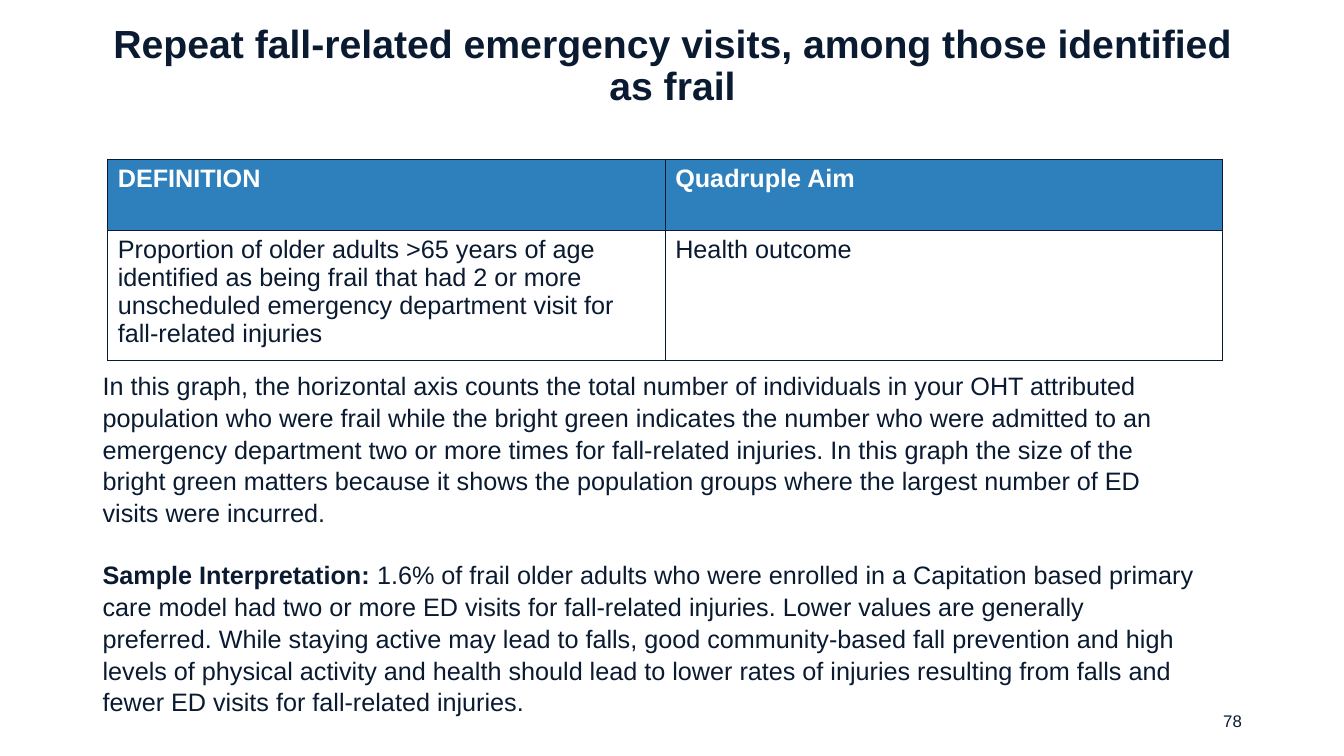
from dataclasses import dataclass

from lxml import etree
from pptx import Presentation
from pptx.dml.color import RGBColor
from pptx.enum import text
from pptx.oxml import ns
from pptx.util import Pt


@dataclass(frozen=True)
class Theme:
    font: str = "Arial"
    ink: str = "0A1A31"
    header: str = "2E80BC"
    paper: str = "FFFFFF"
    title_size: int = 28
    body_size: int = 18
    number_size: int = 12


THEME = Theme()

TITLE = "Repeat fall-related emergency visits, among those identified as frail"
DEFINITION_ROWS = [
    ["DEFINITION", "Quadruple Aim"],
    ["Proportion of older adults >65 years of age identified as being frail that had "
     "2 or more unscheduled emergency department visit for fall-related injuries",
     "Health outcome"],
]
EXPLANATION = [
    [("In this graph, the horizontal axis counts the total number of individuals in your OHT attributed "
      "population who were frail while the bright green indicates the number who were admitted to an "
      "emergency department two or more times for fall-related injuries. In this graph the size of "
      "the bright green matters because it shows the population groups where the largest number of ED "
      "visits were incurred.", False)],
    [("Sample Interpretation: ", True),
     ("1.6% of frail older adults who were enrolled in a Capitation based primary care model had two or "
      "more ED visits for fall-related injuries. Lower values are generally preferred. While staying "
      "active may lead to falls, good community-based fall prevention and high levels of physical "
      "activity and health should lead to lower rates of injuries resulting from falls and fewer ED "
      "visits for fall-related injuries. ", False)],
]


def style_font(font, size, color=THEME.ink, bold=False):
    """Apply the theme typeface with a size, colour and weight."""
    font.name = THEME.font
    font.size = Pt(size)
    font.bold = bold
    font.color.rgb = RGBColor.from_string(color)


def place(shape, left, top, width, height):
    """Position a shape, with lengths in points."""
    shape.left, shape.top = Pt(left), Pt(top)
    shape.width, shape.height = Pt(width), Pt(height)


def set_title(page, wording):
    """Fill and format the title placeholder."""
    title = page.shapes.title
    place(title, 55.5, 17.3, 849.6, 60.5)
    frame = title.text_frame
    frame.text = wording
    frame.word_wrap = True
    frame.auto_size = text.MSO_AUTO_SIZE.NONE
    frame.vertical_anchor = text.MSO_ANCHOR.MIDDLE
    para = frame.paragraphs[0]
    para.alignment = text.PP_ALIGN.CENTER
    para.line_spacing = 0.9
    style_font(para.font, THEME.title_size, bold=True)


def add_text(page, bounds, paragraphs, size, align=text.PP_ALIGN.LEFT,
             anchor=text.MSO_ANCHOR.TOP, line_spacing=1.0, gap=0):
    """Add a wrapped text box of paragraphs made of (wording, bold) spans."""
    frame = page.shapes.add_textbox(*map(Pt, bounds)).text_frame
    frame.word_wrap = True
    frame.vertical_anchor = anchor
    for index, spans in enumerate(paragraphs):
        para = frame.add_paragraph() if index else frame.paragraphs[0]
        para.alignment = align
        para.line_spacing = line_spacing
        if index:
            para.space_before = Pt(gap)
        style_font(para.font, size)
        for wording, bold in spans:
            span = para.add_run()
            span.text = wording
            if bold:
                span.font.bold = True


def outline_cell(cell):
    """Draw a one-point line on all four sides of a cell."""
    properties = cell._tc.get_or_add_tcPr()
    for index, side in enumerate(("lnL", "lnR", "lnT", "lnB")):
        line = etree.Element(ns.qn(f"a:{side}"), w=str(Pt(1)))
        fill = etree.SubElement(line, ns.qn("a:solidFill"))
        etree.SubElement(fill, ns.qn("a:srgbClr"), val=THEME.ink)
        properties.insert(index, line)


def add_definition_table(page, bounds, row_heights, rows):
    """Add the bordered table with a coloured header row."""
    frame = page.shapes.add_table(len(rows), len(rows[0]), *map(Pt, bounds))
    table = frame.table
    table.horz_banding = False
    for row_index, wordings in enumerate(rows):
        table.rows[row_index].height = Pt(row_heights[row_index])
        is_header = row_index == 0
        for column_index, wording in enumerate(wordings):
            cell = table.cell(row_index, column_index)
            cell.text = wording
            cell.fill.solid()
            cell.fill.fore_color.rgb = RGBColor.from_string(THEME.header if is_header else THEME.paper)
            style_font(cell.text_frame.paragraphs[0].font, THEME.body_size,
                       THEME.paper if is_header else THEME.ink, is_header)
            outline_cell(cell)


def main():
    """Build the slide and save the deck."""
    deck = Presentation()
    deck.slide_width, deck.slide_height = Pt(960), Pt(540)
    page = deck.slides.add_slide(deck.slide_layouts.get_by_name("Title Only"))
    set_title(page, TITLE)
    add_definition_table(page, (77, 113.8, 796.4, 144), (50.7, 93), DEFINITION_ROWS)
    add_text(page, (66.2, 260, 796.4, 247), EXPLANATION, THEME.body_size, line_spacing=1.05, gap=21.7)
    add_text(page, (678.2, 500.4, 216, 28.8), [[("78", False)]], THEME.number_size,
             text.PP_ALIGN.RIGHT, text.MSO_ANCHOR.MIDDLE)
    deck.save("out.pptx")


if __name__ == "__main__":
    main()
